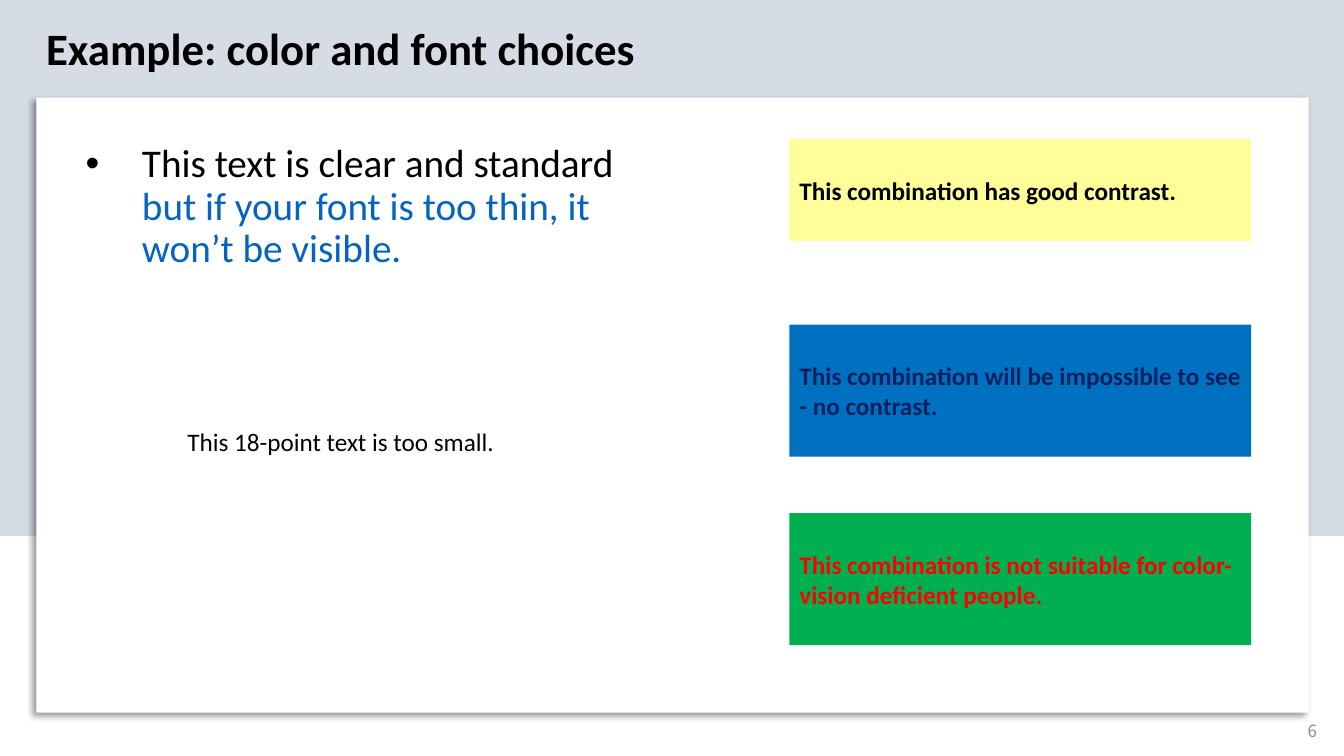
import lxml.etree
import pptx
import pptx.dml.color
import pptx.enum.shapes
import pptx.enum.text
import pptx.oxml.ns
import pptx.util

Inches = pptx.util.Inches
Align = pptx.enum.text.PP_ALIGN
Anchor = pptx.enum.text.MSO_ANCHOR


def color(hex_string):
    return pptx.dml.color.RGBColor.from_string(hex_string)


def add_child(parent, tag, **attributes):
    child = lxml.etree.SubElement(parent, pptx.oxml.ns.qn(tag))
    for name, value in attributes.items():
        child.set(name, str(value))
    return child


def write_text(shape, text, size=18, font="Calibri", fill="000000", bold=False,
               align=Align.LEFT, anchor=Anchor.TOP, wrap=True, line_spacing=None):
    """Write one paragraph; text is a string or a list of (string, colour) lines."""
    frame = shape.text_frame
    frame.word_wrap = wrap
    frame.vertical_anchor = anchor
    paragraph = frame.paragraphs[0]
    paragraph.alignment = align
    paragraph.line_spacing = line_spacing
    lines = [(text, fill)] if isinstance(text, str) else text
    for index, (line, line_color) in enumerate(lines):
        if index:
            paragraph.add_line_break()
        run = paragraph.add_run()
        run.text = line
        run.font.size = pptx.util.Pt(size)
        run.font.name = font
        run.font.bold = bold
        run.font.color.rgb = color(line_color)
    return paragraph


def add_text(slide, box, text, **text_format):
    shape = slide.shapes.add_textbox(*map(Inches, box))
    return write_text(shape, text, **text_format)


def add_rectangle(slide, box, fill):
    shape = slide.shapes.add_shape(
        pptx.enum.shapes.MSO_SHAPE.RECTANGLE, *map(Inches, box))
    shape.shadow.inherit = False
    shape.fill.solid()
    shape.fill.fore_color.rgb = color(fill)
    shape.line.fill.background()
    return shape


def add_shadow(shape):
    effects = shape._element.spPr.find(pptx.oxml.ns.qn("a:effectLst"))
    shadow = add_child(effects, "a:outerShdw", blurRad=pptx.util.Pt(4),
                       dist=pptx.util.Pt(3), dir=135 * 60000,
                       algn="tr", rotWithShape=0)
    black = add_child(shadow, "a:srgbClr", val="000000")
    add_child(black, "a:alpha", val=40000)


def add_bullet(paragraph, indent):
    properties = paragraph._p.get_or_add_pPr()
    properties.set("marL", str(Inches(indent)))
    properties.set("indent", str(-Inches(indent)))
    add_child(properties, "a:buFont", typeface="Arial")
    add_child(properties, "a:buChar", char="•")


def add_frame(slide, box, title, number):
    """Place the backdrop, white panel, title and slide number."""
    left, top, width, height = box
    add_rectangle(slide, (left, top, width, 5.32), "D6DCE5")
    add_shadow(add_rectangle(slide, (left + 0.36, top + 0.97, 12.62, 6.1), "FFFFFF"))
    add_text(slide, (left + width - 3.17, top + height - 0.45, 3, 0.4), number,
             size=12, font="Noto Sans CJK KR", fill="8C8C8C",
             align=Align.RIGHT, anchor=Anchor.MIDDLE)
    add_text(slide, (left + 0.36, top + 0.16, 6.1, 0.64), title,
             size=32, bold=True, wrap=False)


def add_font_examples(slide, box):
    left, top, width, height = box
    paragraph = add_text(
        slide, (left, top, width, 2.2),
        [("This text is clear and standard", "000000"),
         ("but if your font is too thin, it won’t be visible.", "0563C1")],
        size=28, line_spacing=0.9)
    add_bullet(paragraph, 0.56)
    add_text(slide, (left + 1.01, top + height - 0.47, 3.9, 0.47),
             "This 18-point text is too small.")


def add_color_examples(slide, box):
    left, top, width, height = box
    examples = [
        (0, 1.01, "FFFF99", "000000", "This combination has good contrast."),
        (1.84, 1.31, "0070C0", "002060",
         "This combination will be impossible to see - no contrast."),
        (height - 1.31, 1.31, "00B050", "FF0000",
         "This combination is not suitable for color-vision deficient people."),
    ]
    for offset, box_height, fill, text_color, text in examples:
        shape = add_rectangle(slide, (left, top + offset, width, box_height), fill)
        write_text(shape, text, fill=text_color, bold=True, anchor=Anchor.MIDDLE)


def main():
    presentation = pptx.Presentation()
    presentation.slide_width = Inches(13.33)
    presentation.slide_height = Inches(7.5)
    slide = presentation.slides.add_slide(presentation.slide_layouts[6])
    add_frame(slide, (0, 0, 13.33, 7.5), "Example: color and font choices", "6")
    add_font_examples(slide, (0.75, 1.38, 5.51, 3.27))
    add_color_examples(slide, (7.83, 1.38, 4.58, 5.02))
    presentation.save("out.pptx")


if __name__ == "__main__":
    main()
